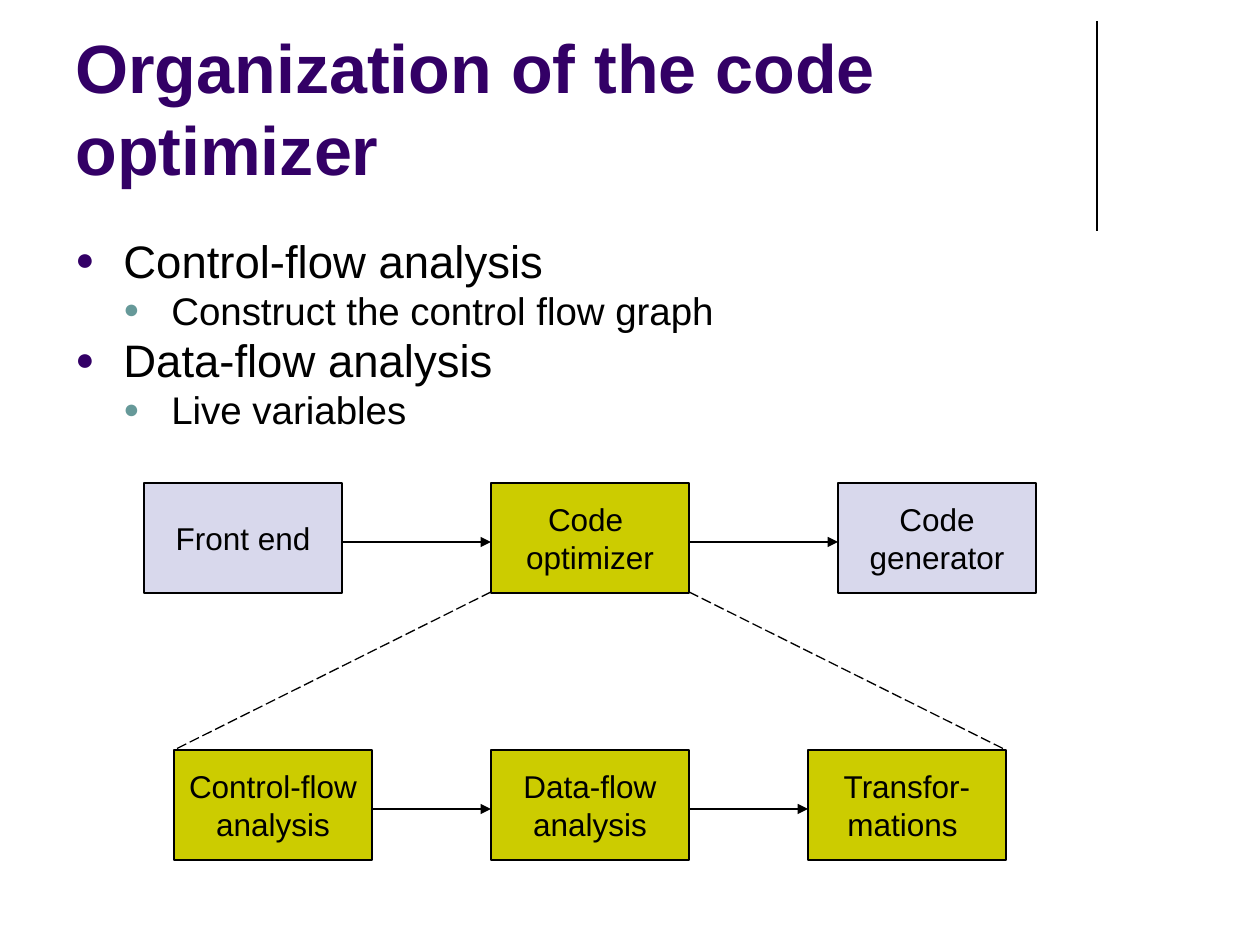
from itertools import pairwise

from lxml.etree import SubElement
from pptx import Presentation
from pptx.dml.color import RGBColor
from pptx.enum.dml import MSO_LINE
from pptx.enum.shapes import MSO_CONNECTOR, MSO_SHAPE
from pptx.enum.text import MSO_ANCHOR, PP_ALIGN
from pptx.oxml.ns import qn
from pptx.util import Emu, Inches, Pt

PURPLE = RGBColor(0x33, 0x00, 0x66)
TEAL = RGBColor(0x66, 0x99, 0x99)
OLIVE = RGBColor(0xCC, 0xCC, 0x00)
LAVENDER = RGBColor(0xD8, 0xD8, 0xEC)
BLACK = RGBColor(0x00, 0x00, 0x00)

FONT = "Arial"
SCALE = Inches(1) / 126
BOX_WIDTH, BOX_HEIGHT = 198, 110
CENTER_LEFT = 491
PHASE_TOP, DETAIL_TOP = 483, 750
PHASE_PITCH, DETAIL_PITCH = 347, 317
ARROW_DROP = 59
INDENT = 48

TOPICS = [
    ("Control-flow analysis", 0),
    ("Construct the control flow graph", 1),
    ("Data-flow analysis", 0),
    ("Live variables", 1),
]
LEVELS = [(26, 6, PURPLE), (22, 5, TEAL)]
PHASES = [
    ("Front end", LAVENDER),
    ("Code \noptimizer", OLIVE),
    ("Code\ngenerator", LAVENDER),
]
DETAILS = [
    ("Control-flow\nanalysis", OLIVE),
    ("Data-flow\nanalysis", OLIVE),
    ("Transfor-\nmations ", OLIVE),
]


def px(length):
    return Emu(round(length * SCALE))


def set_font(para, size, color=BLACK, bold=False):
    para.font.name = FONT
    para.font.size = Pt(size)
    para.font.bold = bold
    para.font.color.rgb = color


def add_text_box(slide, left, top, width, height):
    box = slide.shapes.add_textbox(px(left), px(top), px(width), px(height))
    box.text_frame.word_wrap = True
    return box.text_frame


def add_title(slide, text):
    frame = add_text_box(slide, 63, 16, 1040, 179)
    frame.vertical_anchor = MSO_ANCHOR.BOTTOM
    para = frame.paragraphs[0]
    para.text = text
    set_font(para, 39, PURPLE, bold=True)


def add_bullet(para, level, color):
    properties = para._p.get_or_add_pPr()
    properties.set("marL", str(px(INDENT * (level + 1))))
    properties.set("indent", str(-px(INDENT)))
    bullet_color = SubElement(properties, qn("a:buClr"))
    SubElement(bullet_color, qn("a:srgbClr"), val=str(color))
    SubElement(properties, qn("a:buSzPct"), val="70000")
    SubElement(properties, qn("a:buFont"), typeface=FONT)
    SubElement(properties, qn("a:buChar"), char="●")


def add_topics(slide, topics):
    frame = add_text_box(slide, 63, 237, 1134, 215)
    for index, (text, level) in enumerate(topics):
        para = frame.add_paragraph() if index else frame.paragraphs[0]
        size, space, color = LEVELS[level]
        para.text = text
        para.level = level
        add_bullet(para, level, color)
        para.line_spacing = 0.8
        para.space_before = Pt(space if index else 0)
        set_font(para, size)


def add_box(slide, left, top, text, color):
    box = slide.shapes.add_shape(
        MSO_SHAPE.RECTANGLE, px(left), px(top), px(BOX_WIDTH), px(BOX_HEIGHT)
    )
    box.shadow.inherit = False
    box.fill.solid()
    box.fill.fore_color.rgb = color
    box.line.color.rgb = BLACK
    box.line.width = Pt(0.75)
    frame = box.text_frame
    frame.word_wrap = False
    frame.vertical_anchor = MSO_ANCHOR.MIDDLE
    para = frame.paragraphs[0]
    para.text = text
    para.alignment = PP_ALIGN.CENTER
    set_font(para, 18)


def add_line(slide, start, end, arrow=False, dash=None):
    line = slide.shapes.add_connector(
        MSO_CONNECTOR.STRAIGHT, *map(px, start), *map(px, end)
    )
    line.line.color.rgb = BLACK
    line.line.width = Pt(0.75)
    if dash:
        line.line.dash_style = dash
    if arrow:
        SubElement(line.line._get_or_add_ln(), qn("a:tailEnd"), type="triangle")
    SubElement(line._element.spPr, qn("a:effectLst"))


def add_row(slide, top, pitch, entries):
    lefts = [CENTER_LEFT + pitch * step for step in (-1, 0, 1)]
    for left, (text, color) in zip(lefts, entries):
        add_box(slide, left, top, text, color)
    middle = top + ARROW_DROP
    for left, following in pairwise(lefts):
        add_line(slide, (left + BOX_WIDTH, middle), (following, middle), arrow=True)


def add_expansion(slide):
    for edge, shift in ((CENTER_LEFT, -DETAIL_PITCH), (CENTER_LEFT + BOX_WIDTH, DETAIL_PITCH)):
        start = (edge, PHASE_TOP + BOX_HEIGHT - 1)
        add_line(slide, start, (edge + shift, DETAIL_TOP), dash=MSO_LINE.LONG_DASH)


def main():
    deck = Presentation()
    deck.slide_width, deck.slide_height = px(1260), px(945)
    slide = deck.slides.add_slide(deck.slide_layouts[6])
    add_line(slide, (1097, 21), (1097, 231))
    add_title(slide, "Organization of the code optimizer")
    add_topics(slide, TOPICS)
    add_row(slide, PHASE_TOP, PHASE_PITCH, PHASES)
    add_row(slide, DETAIL_TOP, DETAIL_PITCH, DETAILS)
    add_expansion(slide)
    deck.save("out.pptx")


if __name__ == "__main__":
    main()
